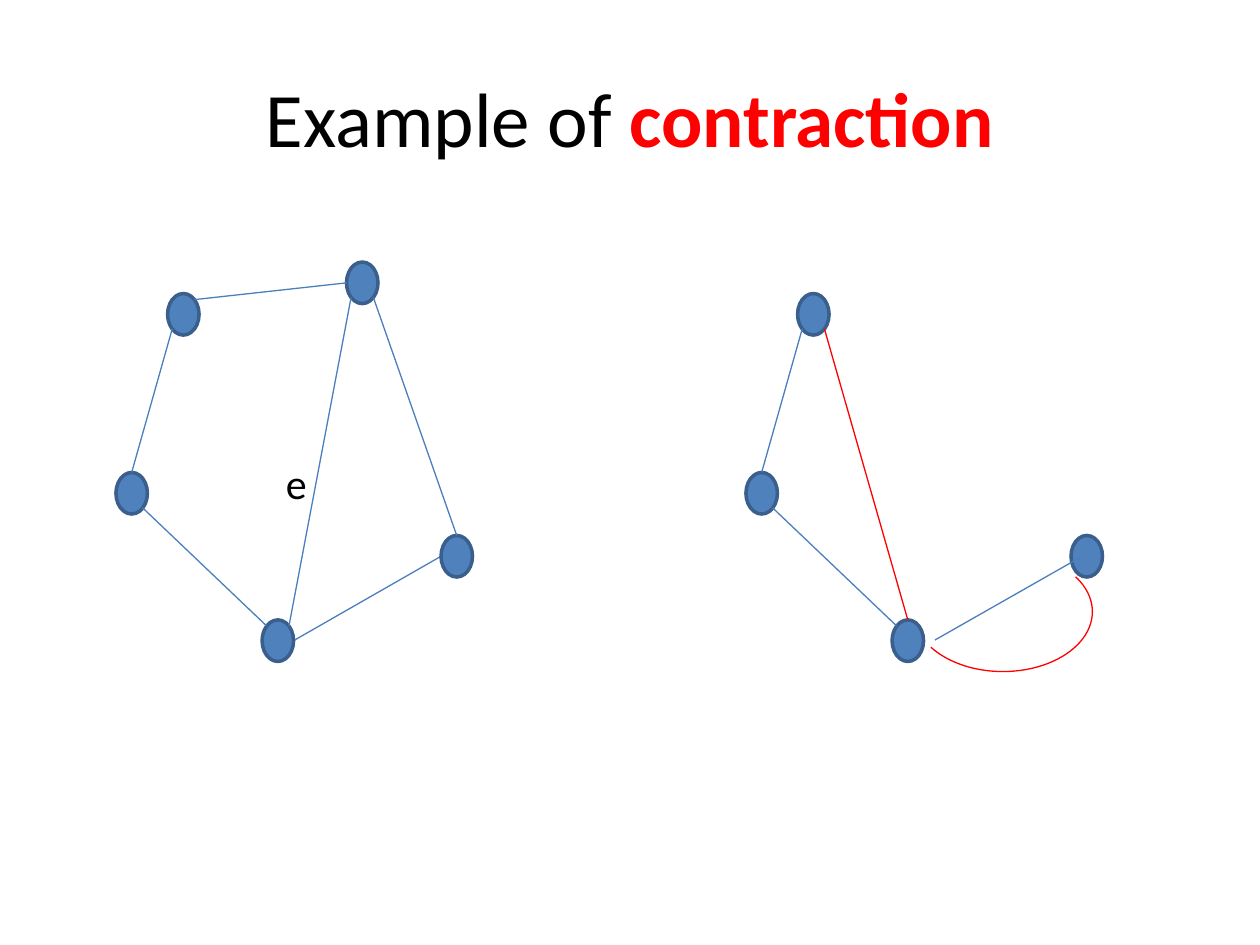
"""Builds a slide that shows a graph before and after contracting edge e."""
from pptx import Presentation
from pptx.dml.color import RGBColor
from pptx.enum.shapes import MSO_CONNECTOR, MSO_SHAPE
from pptx.enum.text import MSO_ANCHOR, MSO_AUTO_SIZE, PP_ALIGN
from pptx.oxml.ns import qn
from pptx.util import Inches, Pt
from lxml.etree import SubElement

BLUE, OUTLINE, EDGE, RED, BLACK = "4F81BD", "3A5F8C", "4B7EBC", "FF0000", "000000"
NODE_W, NODE_H = 0.25, 0.33
CORNER = 0.5 ** 0.5
SITES = {"N": (0, -1), "S": (0, 1), "W": (-1, 0), "E": (1, 0),
         "NE": (CORNER, -CORNER), "SE": (CORNER, CORNER), "SW": (-CORNER, CORNER)}
NODES = {"upper": (1.33, 2.33), "left": (0.92, 3.75), "bottom": (2.08, 4.92),
         "top": (2.75, 2.08), "right": (3.5, 4.25)}
COPY_SHIFT = 5


def color(value):
    """Turn a hex string into a colour."""
    return RGBColor.from_string(value)


def write(paragraph, text, size=24, ink=BLACK, bold=False):
    """Add a formatted run to a paragraph."""
    run = paragraph.add_run()
    run.text = text
    run.font.name, run.font.size, run.font.bold = "Calibri", Pt(size), bold
    run.font.color.rgb = color(ink)


def site(node, side, shift=0):
    """Give the point on a node's outline in the named direction."""
    (left, top), (dx, dy) = NODES[node], SITES[side]
    return left + shift + NODE_W / 2 * (1 + dx), top + NODE_H / 2 * (1 + dy)


class GraphSlide:
    """Holds the current slide and draws graph elements on it."""

    def __init__(self, deck):
        """Add a title-only slide."""
        self.slide = deck.slides.add_slide(deck.slide_layouts[5])
        self.shapes = self.slide.shapes

    def title(self, plain, stressed):
        """Fill the title, with its last word stressed."""
        heading = self.slide.shapes.title
        heading.left, heading.top, heading.width, heading.height = map(
            Inches, (0.5, 0.3, 9, 1.25))
        heading.text_frame.vertical_anchor = MSO_ANCHOR.MIDDLE
        paragraph = heading.text_frame.paragraphs[0]
        paragraph.alignment = PP_ALIGN.CENTER
        write(paragraph, plain, size=44)
        write(paragraph, stressed, size=44, ink=RED, bold=True)

    def node(self, name, shift=0):
        """Draw a node of the graph."""
        left, top = NODES[name]
        vertex = self.shapes.add_shape(MSO_SHAPE.OVAL, *map(
            Inches, (left + shift, top, NODE_W, NODE_H)))
        vertex.shadow.inherit = False
        vertex.fill.solid()
        vertex.fill.fore_color.rgb = color(BLUE)
        vertex.line.color.rgb = color(OUTLINE)
        vertex.line.width = Pt(2)

    def edge(self, start, end, ink=EDGE):
        """Draw a straight edge between two points."""
        link = self.shapes.add_connector(
            MSO_CONNECTOR.STRAIGHT, *map(Inches, (*start, *end)))
        link.line.color.rgb = color(ink)
        link.line.width = Pt(0.75)
        SubElement(link.element.spPr, qn("a:effectLst"))

    def curved_edge(self, left, top, width, height, angles):
        """Draw a red arc that bends downwards."""
        arc = self.shapes.add_shape(MSO_SHAPE.ARC, *map(
            Inches, (left, top, width, height)))
        arc.shadow.inherit = False
        arc.fill.background()
        arc.line.color.rgb = color(RED)
        arc.line.width = Pt(0.75)
        for index, angle in enumerate(angles):
            arc.adjustments[index] = angle * 0.6
        arc.element.spPr.find(qn("a:xfrm")).set("flipV", "1")

    def label(self, text, left, top, width, height):
        """Write an edge label."""
        frame = self.shapes.add_textbox(*map(
            Inches, (left, top, width, height))).text_frame
        frame.word_wrap = True
        frame.auto_size = MSO_AUTO_SIZE.SHAPE_TO_FIT_TEXT
        write(frame.paragraphs[0], text)


def main():
    """Build and save the deck."""
    deck = Presentation()
    deck.slide_width, deck.slide_height = Inches(10), Inches(7.5)
    graph = GraphSlide(deck)
    graph.title("Example of ", "contraction")

    graph.edge(site("bottom", "E"), site("right", "W"))
    graph.shapes = graph.slide.shapes.add_group_shape().shapes
    for name in NODES:
        graph.node(name)
    for start, start_side, end, end_side in (
            ("left", "SE", "bottom", "NW"), ("bottom", "NE", "top", "SW"),
            ("right", "N", "top", "SE"), ("top", "W", "upper", "NE"),
            ("upper", "SW", "left", "N")):
        graph.edge(site(start, start_side), site(end, end_side))
    graph.label("e", 2.17, 3.58, 0.58, 0.5)

    graph.shapes = graph.slide.shapes
    for name in ("upper", "left", "bottom", "right"):
        graph.node(name, COPY_SHIFT)
    for start, start_side, end, end_side, ink in (
            ("left", "SE", "bottom", "NW", EDGE),
            ("bottom", "N", "upper", "SE", RED),
            ("upper", "SW", "left", "N", EDGE)):
        graph.edge(site(start, start_side, COPY_SHIFT),
                   site(end, end_side, COPY_SHIFT), ink)
    graph.edge((7.42, 5.08), (8.58, 4.42))
    graph.curved_edge(7.25, 4.38, 1.42, 0.95, (206.25, 25.64))
    deck.save("out.pptx")


SITES["NW"] = (-CORNER, -CORNER)

if __name__ == "__main__":
    main()
